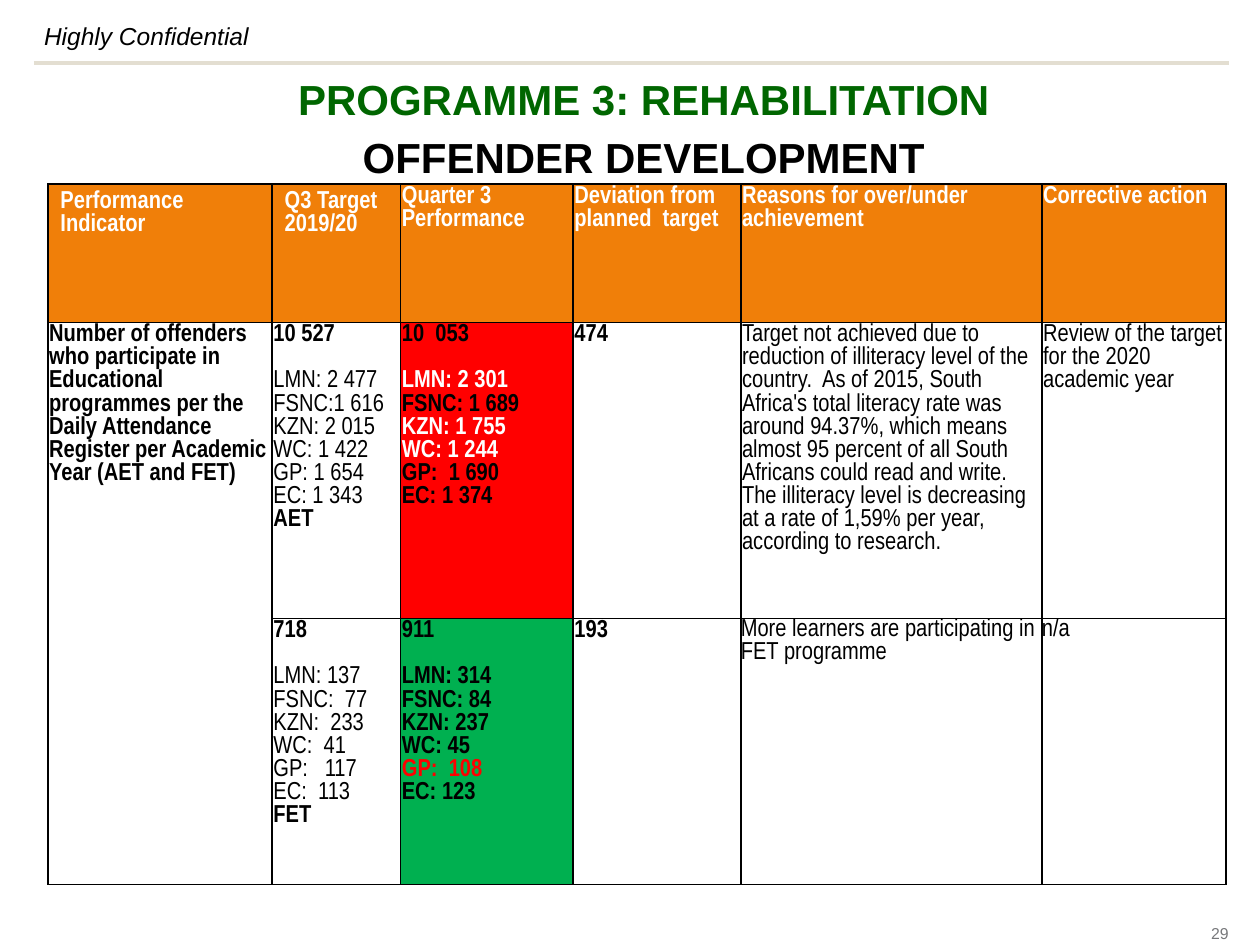
from lxml.etree import SubElement
from pptx import Presentation
from pptx.dml.color import RGBColor
from pptx.enum.shapes import MSO_CONNECTOR as Connector
from pptx.enum.text import MSO_ANCHOR as Anchor, PP_ALIGN as Align
from pptx.oxml.ns import qn
from pptx.util import Inches, Pt

COLOURS = {
    "black": "000000", "white": "FFFFFF", "title": "006600", "rule": "E3DED1",
    "number": "77787B", "header": "F07F09", "red": "FF0000", "green": "00B050",
}
WIDTH, HEIGHT = Inches(10), Inches(7.5)
COLUMN_SHARES = [17.8, 10.2, 13.7, 13.3, 23.9, 14.6]
ROW_SHARES = [14.67, 31.33, 28.13]
TABLE_LEFT, TABLE_TOP = 3.8, 19.47
TIGHT = (0.01, 0.01, 0.01, 0)
NONE = (0, 0, 0, 0)
LINE_GAP = 13.2

HEADERS = [
    "Performance Indicator", "Q3 Target 2019/20", "Quarter 3\nPerformance",
    "Deviation from planned  target", "Reasons for over/under achievement",
    "Corrective action",
]
INDICATOR = ("Number of offenders who participate in Educational programmes per the "
             "Daily Attendance Register per Academic Year (AET and FET)")
RESULTS = [
    {
        "target": ("10 527", ["LMN: 2 477", "FSNC:1 616", "KZN: 2 015", "WC: 1 422",
                              "GP: 1 654", "EC: 1 343"], "AET"),
        "actual": ("10  053", [("LMN: 2 301", "white"), ("FSNC: 1 689", "black"),
                               ("KZN: 1 755", "white"), ("WC: 1 244", "white"),
                               ("GP:  1 690", "black"), ("EC: 1 374", "black")]),
        "fill": "red",
        "deviation": "474",
        "reason": ("Target not achieved due to reduction of illiteracy level of the country.  "
                   "As of 2015, South Africa's total literacy rate was around 94.37%, which "
                   "means almost 95 percent of all South Africans could read and write.  The "
                   "illiteracy level is decreasing at a rate of 1,59% per year, according to "
                   "research."),
        "action": "Review of the target for the 2020 academic year",
        "margins": TIGHT,
    },
    {
        "target": ("718", ["LMN: 137", "FSNC:  77", "KZN:  233", "WC:  41",
                           "GP:   117", "EC:  113"], "FET"),
        "actual": ("911", [("LMN: 314", "black"), ("FSNC: 84", "black"),
                           ("KZN: 237", "black"), ("WC: 45", "black"),
                           ("GP:  108", "red"), ("EC: 123", "black")]),
        "fill": "green",
        "deviation": "193",
        "reason": "More learners are participating in FET programme",
        "action": "n/a",
        "margins": NONE,
    },
]


def colour(name):
    return RGBColor.from_string(COLOURS[name])


def across(share):
    return round(WIDTH * share / 100)


def down(share):
    return round(HEIGHT * share / 100)


def set_margins(target, margins):
    (target.margin_left, target.margin_top,
     target.margin_right, target.margin_bottom) = map(Inches, margins)


def add_text(paragraph, text, size, ink="black", bold=False, italic=False, face="Arial"):
    for index, line in enumerate(text.split("\n")):
        if index:
            paragraph.add_line_break()
        run = paragraph.add_run()
        run.text = line
        font = run.font
        font.size, font.name, font.bold, font.italic = Pt(size), face, bold, italic
        font.color.rgb = colour(ink)


def add_box(slide, left, top, width, height, margins=NONE, anchor=Anchor.MIDDLE,
            align=Align.LEFT, wrap=True):
    box = slide.shapes.add_textbox(across(left), down(top), across(width), down(height))
    frame = box.text_frame
    frame.word_wrap = wrap
    frame.vertical_anchor = anchor
    set_margins(frame, margins)
    paragraph = frame.paragraphs[0]
    paragraph.alignment = align
    return paragraph


def add_borders(cell):
    properties = cell._tc.get_or_add_tcPr()
    for side in ("lnL", "lnR", "lnT", "lnB"):
        line = SubElement(properties, qn(f"a:{side}"), w=str(Pt(1)))
        fill = SubElement(line, qn("a:solidFill"))
        SubElement(fill, qn("a:srgbClr"), val=COLOURS["black"])


def fill_cell(cell, lines, fill=None, margins=TIGHT):
    if fill:
        cell.fill.solid()
        cell.fill.fore_color.rgb = colour(fill)
    else:
        cell.fill.background()
    if margins:
        set_margins(cell, margins)
    frame = cell.text_frame
    for index, (text, ink, bold) in enumerate(lines):
        paragraph = frame.add_paragraph() if index else frame.paragraphs[0]
        if index == 1:
            paragraph.space_before = Pt(LINE_GAP)
        add_text(paragraph, text, 14, ink, bold, face="Arial Narrow")


def add_results_table(slide):
    table = slide.shapes.add_table(
        len(ROW_SHARES), len(COLUMN_SHARES), across(TABLE_LEFT), down(TABLE_TOP),
        across(sum(COLUMN_SHARES)), down(sum(ROW_SHARES))).table
    table.first_row = table.horz_banding = False
    for column, share in zip(table.columns, COLUMN_SHARES):
        column.width = across(share)
    for row, share in zip(table.rows, ROW_SHARES):
        row.height = down(share)
    for cell in table.iter_cells():
        add_borders(cell)
        cell.fill.background()

    for index, header in enumerate(HEADERS):
        fill_cell(table.cell(0, index), [(header, "white", True)], "header",
                  TIGHT if index > 1 else None)
    table.cell(1, 0).merge(table.cell(2, 0))
    fill_cell(table.cell(1, 0), [(INDICATOR, "black", True)])
    for row, result in enumerate(RESULTS, 1):
        total, regions, level = result["target"]
        fill_cell(table.cell(row, 1), [(total, "black", True),
                                       *((region, "black", False) for region in regions),
                                       (level, "black", True)])
        total, regions = result["actual"]
        fill_cell(table.cell(row, 2), [(total, "black", True),
                                       *((region, ink, True) for region, ink in regions)],
                  result["fill"])
        fill_cell(table.cell(row, 3), [(result["deviation"], "black", True)])
        for index, key in enumerate(("reason", "action"), 4):
            fill_cell(table.cell(row, index), [(result[key], "black", False)],
                      margins=result["margins"])


def main():
    presentation = Presentation()
    presentation.slide_width, presentation.slide_height = WIDTH, HEIGHT
    slide = presentation.slides.add_slide(presentation.slide_layouts[6])

    rule = slide.shapes.add_connector(Connector.STRAIGHT, across(2.7), down(6.67),
                                      across(97.5), down(6.67))
    rule.line.color.rgb = colour("rule")
    rule.line.width = Pt(2.25)
    SubElement(rule._element.spPr, qn("a:effectLst"))

    number = add_box(slide, 94.6, 97.73, 2.9, 2, align=Align.RIGHT)
    add_text(number, "29", 9, "number")
    marking = add_box(slide, 2.7, 1.2, 18.4, 5.2, (0.08,) * 4, Anchor.TOP, wrap=False)
    add_text(marking, "Highly Confidential", 14, italic=True)

    add_results_table(slide)

    title = add_box(slide, 3.8, 7.2, 94.6, 11.87, align=Align.CENTER)
    title.line_spacing = 1.15
    add_text(title, "PROGRAMME 3: REHABILITATION", 24, "title", True)
    title.add_line_break()
    add_text(title, "OFFENDER DEVELOPMENT", 24, bold=True)

    presentation.save("out.pptx")


if __name__ == "__main__":
    main()
